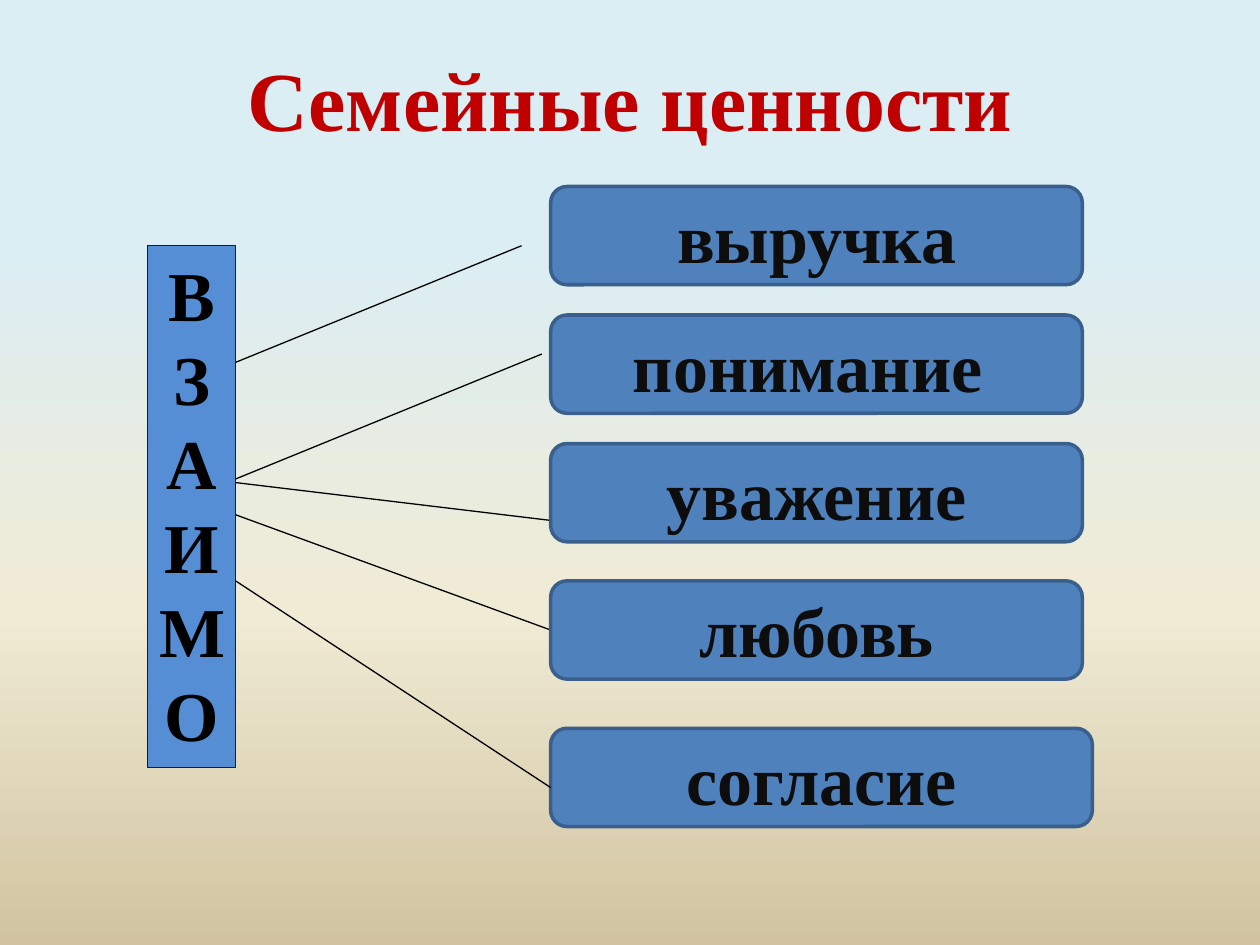
from copy import deepcopy
from pptx import Presentation
from pptx.dml.color import RGBColor
from pptx.enum.shapes import MSO_CONNECTOR, MSO_SHAPE
from pptx.enum.text import MSO_ANCHOR, MSO_AUTO_SIZE, PP_ALIGN
from pptx.oxml.ns import qn
from pptx.util import Inches, Pt
from lxml.etree import SubElement

TITLE = "Семейные ценности"
PREFIX = ["В", "ЗАИМО"]
VALUES = [
    ("выручка", 1.48, 4.22),
    ("понимание ", 2.5, 4.22),
    ("уважение", 3.52, 4.22),
    ("любовь", 4.61, 4.22),
    ("согласие", 5.78, 4.3),
]
BACK_LINES = [
    ((1.8, 4.06), (4.37, 5)),
    ((1.87, 3.83), (4.45, 4.14)),
    ((1.8, 3.83), (4.3, 2.81)),
    ((1.64, 2.97), (4.14, 1.95)),
]
FRONT_LINE = ((1.87, 4.61), (4.37, 6.25))
VALUE_LEFT, VALUE_HEIGHT = 4.37, 0.78

FONT = "Times New Roman"
RED = RGBColor(0xC0, 0x00, 0x00)
BLACK = RGBColor(0x00, 0x00, 0x00)
INK = RGBColor(0x0D, 0x0D, 0x0D)
BROWN = RGBColor(0x1E, 0x1C, 0x11)
SKY = RGBColor(0x55, 0x8E, 0xD5)
BLUE = RGBColor(0x4F, 0x81, 0xBD)
NAVY = RGBColor(0x3A, 0x5F, 0x8C)
BACKGROUND = [
    (0.25, RGBColor(0xDB, 0xEE, 0xF4)),
    (0.65, RGBColor(0xF0, 0xEB, 0xD5)),
    (1, RGBColor(0xD1, 0xC3, 0x9F)),
]


def paint_background(slide):
    fill = slide.background.fill
    fill.gradient()
    fill.gradient_angle = 270
    stops = slide.background._cSld.find(".//" + qn("a:gsLst"))
    stops.append(deepcopy(stops[-1]))
    for stop, (position, color) in zip(fill.gradient_stops, BACKGROUND):
        stop.position = position
        stop.color.rgb = color


def write(frame, lines, size, color, anchor):
    frame.word_wrap = True
    frame.vertical_anchor = anchor
    for index, text in enumerate(lines):
        paragraph = frame.add_paragraph() if index else frame.paragraphs[0]
        paragraph.alignment = PP_ALIGN.CENTER
        run = paragraph.add_run()
        run.text = text
        run.font.name = FONT
        run.font.size = Pt(size)
        run.font.bold = True
        run.font.color.rgb = color


def add_box(slide, kind, box, fill, outline, width):
    shape = slide.shapes.add_shape(kind, *map(Inches, box))
    shape.shadow.inherit = False
    shape.fill.solid()
    shape.fill.fore_color.rgb = fill
    shape.line.color.rgb = outline
    shape.line.width = Pt(width)
    return shape


def add_line(slide, start, end):
    line = slide.shapes.add_connector(
        MSO_CONNECTOR.STRAIGHT, *map(Inches, start + end))
    line.line.color.rgb = BLACK
    line.line.width = Pt(0.75)
    SubElement(line._element.spPr, qn("a:effectLst"))


def main():
    presentation = Presentation()
    presentation.slide_width = Inches(10)
    presentation.slide_height = Inches(7.5)
    slide = presentation.slides.add_slide(presentation.slide_layouts[5])
    paint_background(slide)

    for start, end in BACK_LINES:
        add_line(slide, start, end)

    title = slide.shapes.title
    title.left, title.top = Inches(0.5), Inches(0.23)
    title.width, title.height = Inches(9), Inches(1.09)
    write(title.text_frame, [TITLE], 48, RED, MSO_ANCHOR.MIDDLE)

    column = add_box(slide, MSO_SHAPE.RECTANGLE, (1.17, 1.95, 0.7, 4.14),
                     SKY, BROWN, 0.75)
    write(column.text_frame, PREFIX, 40, BLACK, MSO_ANCHOR.TOP)
    column.text_frame.auto_size = MSO_AUTO_SIZE.SHAPE_TO_FIT_TEXT

    for text, top, width in VALUES:
        box = (VALUE_LEFT, top, width, VALUE_HEIGHT)
        shape = add_box(slide, MSO_SHAPE.ROUNDED_RECTANGLE, box, BLUE, NAVY, 2)
        write(shape.text_frame, [text], 40, INK, MSO_ANCHOR.MIDDLE)

    add_line(slide, *FRONT_LINE)
    presentation.save("out.pptx")


if __name__ == "__main__":
    main()
